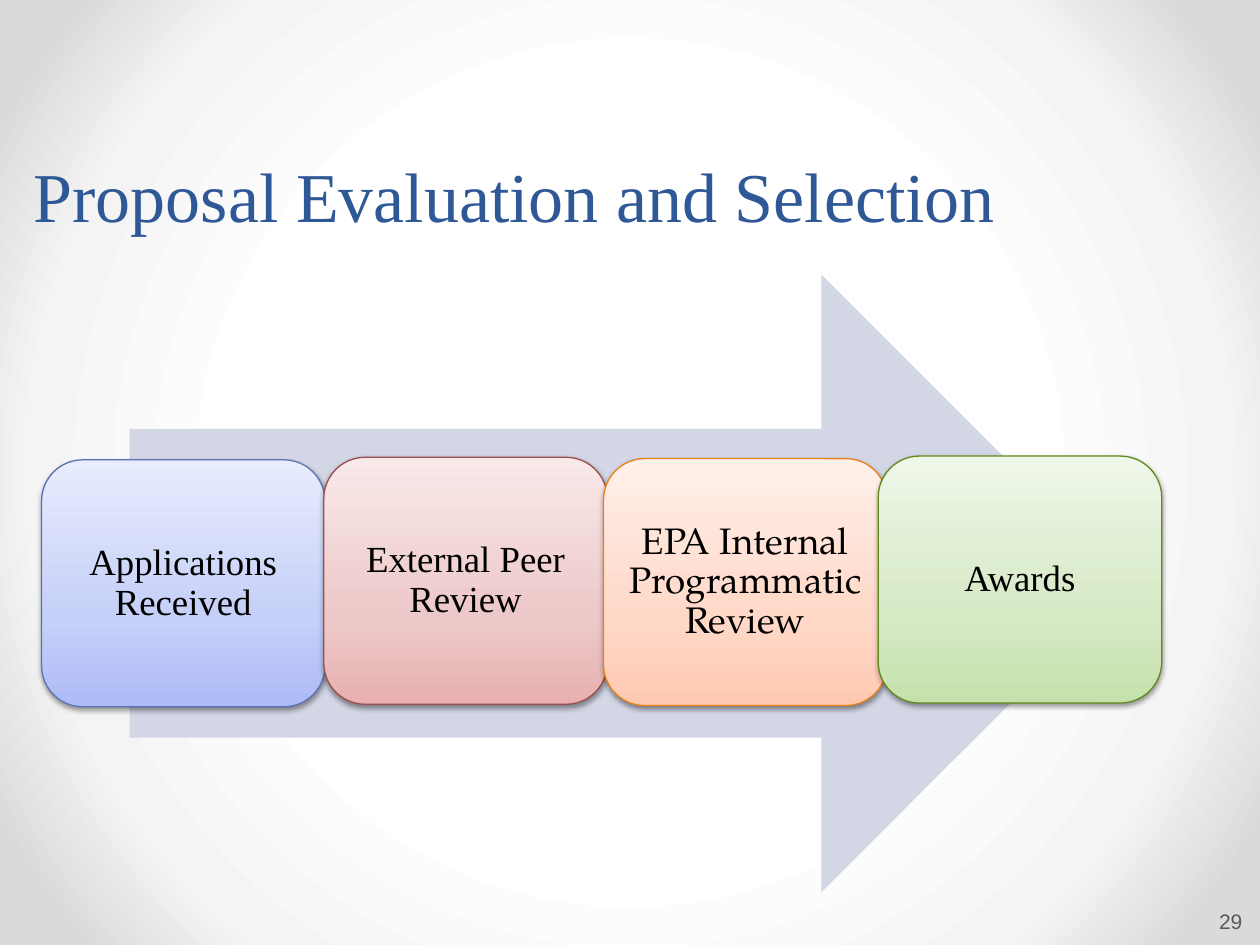
from lxml import etree
from pptx import Presentation
from pptx.dml.color import RGBColor
from pptx.enum import shapes, text
from pptx.oxml.ns import qn
from pptx.util import Inches, Pt

THEME = {
    "serif": "Times New Roman", "book": "TeX Gyre Pagella", "sans": "Arial",
    "title": "2F5897", "ink": "000000", "number": "595959", "arrow": "D2D6E5",
    "title_size": 40, "step_size": 21, "number_size": 12,
    "backdrop": [(50, "FFFFFF"), (76, "F4F4F4"), (92, "DADADA")],
}
TITLE = "Proposal Evaluation and Selection"
PAGE_NUMBER = "29"
# label, font, left, top, line colour, gradient colours from bottom to top
STEPS = [
    ("Applications Received", "serif", 0.33, 3.65, "5C72B2", ("ADBBF6", "C5CFF8", "E8ECFD")),
    ("External Peer Review", "serif", 2.57, 3.63, "9A4E4E", ("E8B0B0", "EDC8C8", "F9E9E9")),
    ("EPA Internal Programmatic Review", "book", 4.79, 3.64, "E6811C",
     ("FFC9B1", "FFD8C8", "FFF0EA")),
    ("Awards", "serif", 6.97, 3.62, "62891C", ("C5E1AB", "D6E9C5", "EFF7E9")),
]
STEP_SIZE = (2.25, 1.96)
STEP_STOPS = (0, 35, 100)
STEP_INSET = 0.08  # the rounded corners already hold the text in by 0.1


def add(parent, tag, **attributes):
    return etree.SubElement(parent, qn(tag), {k: str(v) for k, v in attributes.items()})


def set_gradient(fill, owner, stops, radial=False):
    """Fill with (percent, colour) stops, from the centre out or from the bottom up."""
    fill.gradient()
    gradient = next(owner.iter(qn("a:gradFill")))
    for child in list(gradient):
        gradient.remove(child)
    stop_list = add(gradient, "a:gsLst")
    for percent, colour in stops:
        stop = add(stop_list, "a:gs", pos=percent * 1000)
        add(stop, "a:srgbClr", val=colour)
    if radial:
        circle = add(gradient, "a:path", path="circle")
        add(circle, "a:fillToRect", l=50000, t=50000, r=50000, b=50000)
    else:
        add(gradient, "a:lin", ang=270 * 60000, scaled=0)


def add_soft_shadow(shape):
    effects = shape._element.spPr.find(qn("a:effectLst"))
    shadow = add(effects, "a:outerShdw", blurRad=Pt(3.1), dist=Pt(1.6),
                 dir=90 * 60000, rotWithShape=0)
    add(add(shadow, "a:srgbClr", val="000000"), "a:alpha", val=38000)


def write(shape, words, *, font, size, colour, align, anchor, insets, spacing=None):
    """Put one paragraph in a shape; insets run left, top, right, bottom."""
    frame = shape.text_frame
    frame.word_wrap = True
    frame.vertical_anchor = anchor
    (frame.margin_left, frame.margin_top,
     frame.margin_right, frame.margin_bottom) = map(Inches, insets)
    para = frame.paragraphs[0]
    para.alignment = align
    para.line_spacing = spacing
    span = para.add_run()
    span.text = words
    span.font.name = THEME[font]
    span.font.size = Pt(THEME[size])
    span.font.color.rgb = RGBColor.from_string(THEME[colour])


def add_shape(page, kind, *place):
    shape = page.shapes.add_shape(kind, *map(Inches, place))
    shape.shadow.inherit = False
    return shape


def add_step(page, label, font, left, top, line, colours):
    box = add_shape(page, shapes.MSO_SHAPE.ROUNDED_RECTANGLE, left, top, *STEP_SIZE)
    set_gradient(box.fill, box._element.spPr, zip(STEP_STOPS, colours))
    box.line.color.rgb = RGBColor.from_string(line)
    box.line.width = Pt(0.75)
    add_soft_shadow(box)
    write(box, label, font=font, size="step_size", colour="ink", spacing=0.9,
          align=text.PP_ALIGN.CENTER, anchor=text.MSO_ANCHOR.MIDDLE,
          insets=[STEP_INSET] * 4)


def main():
    deck = Presentation()
    deck.slide_width, deck.slide_height = Inches(10), Inches(7.5)
    page = deck.slides.add_slide(deck.slide_layouts[6])
    set_gradient(page.background.fill, page._element, THEME["backdrop"], radial=True)

    title = page.shapes.add_textbox(*map(Inches, (0.17, 1.23, 8.52, 0.91)))
    write(title, TITLE, font="serif", size="title_size", colour="title", spacing=0.9,
          align=text.PP_ALIGN.LEFT, anchor=text.MSO_ANCHOR.MIDDLE,
          insets=(0.1, 0.05, 0.1, 0.25))
    number = page.shapes.add_textbox(*map(Inches, (9.3, 7.06, 0.61, 0.4)))
    write(number, PAGE_NUMBER, font="sans", size="number_size", colour="number",
          align=text.PP_ALIGN.RIGHT, anchor=text.MSO_ANCHOR.BOTTOM,
          insets=(0.03, 0.05, 0.05, 0.05))

    arrow = add_shape(page, shapes.MSO_SHAPE.RIGHT_ARROW, 1.03, 2.18, 7.94, 4.9)
    arrow.fill.solid()
    arrow.fill.fore_color.rgb = RGBColor.from_string(THEME["arrow"])
    arrow.line.fill.background()
    for step in STEPS:
        add_step(page, *step)
    deck.save("out.pptx")


if __name__ == "__main__":
    main()
